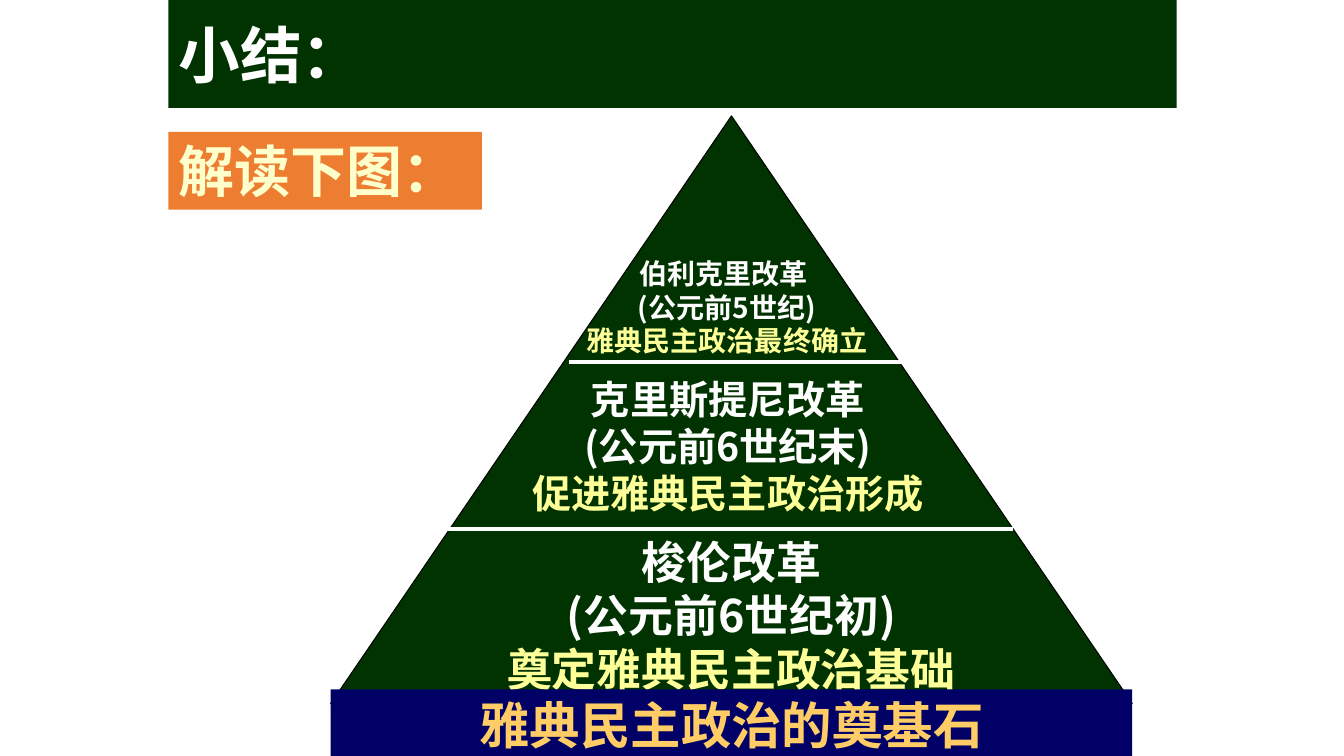
from lxml.etree import SubElement
from pptx import Presentation
from pptx.dml.color import RGBColor
from pptx.enum.shapes import MSO_CONNECTOR, MSO_SHAPE
from pptx.enum.text import MSO_ANCHOR, MSO_AUTO_SIZE, PP_ALIGN
from pptx.oxml.ns import qn
from pptx.util import Pt

PX = 9144
CJK_FONT = "Noto Sans CJK SC"
COLORS = {
    "green": "003300", "orange": "ED7D31", "navy": "000066", "black": "000000",
    "white": "FFFFFF", "cream": "FFFFCC", "yellow": "FFFF99", "gold": "FFCC66",
}


def color(name):
    return RGBColor.from_string(COLORS[name])


def write_lines(shape, lines, size, font_name, alignment, anchor, auto_size, wrap=True):
    frame = shape.text_frame
    frame.word_wrap = wrap
    frame.auto_size = auto_size
    frame.vertical_anchor = anchor
    for index, (text, color_name) in enumerate(lines):
        paragraph = frame.add_paragraph() if index else frame.paragraphs[0]
        paragraph.alignment = alignment
        paragraph.line_spacing = 1.0
        paragraph.space_before = Pt(0)
        run = paragraph.add_run()
        run.text = text
        run.font.size = Pt(size)
        run.font.bold = True
        run.font.name = font_name
        run.font.color.rgb = color(color_name)
        SubElement(run.font._element, qn("a:ea")).set("typeface", CJK_FONT)


presentation = Presentation()
presentation.slide_width = 1333 * PX
presentation.slide_height = 750 * PX
slide = presentation.slides.add_slide(presentation.slide_layouts[5])

title = slide.shapes.title
title.left, title.top, title.width, title.height = 167 * PX, 0, 1000 * PX, 107 * PX
title.fill.solid()
title.fill.fore_color.rgb = color("green")
write_lines(title, [("小结：", "white")], 44, CJK_FONT, PP_ALIGN.LEFT,
            MSO_ANCHOR.MIDDLE, MSO_AUTO_SIZE.NONE)

pyramid = slide.shapes.add_shape(
    MSO_SHAPE.ISOSCELES_TRIANGLE, 328 * PX, 115 * PX, 795 * PX, 583 * PX)
pyramid.shadow.inherit = False
pyramid.fill.solid()
pyramid.fill.fore_color.rgb = color("green")
pyramid.line.color.rgb = color("black")
pyramid.line.width = Pt(0.75)

for left, right, y in [(438, 1005, 525), (564, 895, 359)]:
    divider = slide.shapes.add_connector(
        MSO_CONNECTOR.STRAIGHT, left * PX, y * PX, right * PX, y * PX)
    divider.line.color.rgb = color("white")
    divider.line.width = Pt(3)
    SubElement(divider._element.spPr, qn("a:effectLst"))

reforms = [
    (493, 524, 465, 172, 32, "梭伦改革", "(公元前6世纪初)", "奠定雅典民主政治基础"),
    (517, 367, 410, 151, 28, "克里斯提尼改革", "(公元前6世纪末)", "促进雅典民主政治形成"),
    (572, 249, 298, 111, 20, "伯利克里改革 ", "(公元前5世纪)", "雅典民主政治最终确立"),
]
for left, top, width, height, size, reform, date, result in reforms:
    box = slide.shapes.add_textbox(left * PX, top * PX, width * PX, height * PX)
    lines = [(reform, "white"), (date, "white"), (result, "yellow")]
    write_lines(box, lines, size, CJK_FONT, PP_ALIGN.CENTER,
                MSO_ANCHOR.MIDDLE, MSO_AUTO_SIZE.SHAPE_TO_FIT_TEXT, False)

banners = [
    (167, 131, 311, 77, "orange", "解读下图：", "cream", 40, PP_ALIGN.LEFT),
    (328, 684, 795, 71, "navy", "雅典民主政治的奠基石", "gold", 36, PP_ALIGN.CENTER),
]
for left, top, width, height, fill, text, text_color, size, alignment in banners:
    banner = slide.shapes.add_shape(
        MSO_SHAPE.RECTANGLE, left * PX, top * PX, width * PX, height * PX)
    banner.shadow.inherit = False
    banner.fill.solid()
    banner.fill.fore_color.rgb = color(fill)
    banner.line.fill.background()
    write_lines(banner, [(text, text_color)], size, "Arial", alignment,
                MSO_ANCHOR.TOP, MSO_AUTO_SIZE.SHAPE_TO_FIT_TEXT)

presentation.save("out.pptx")
